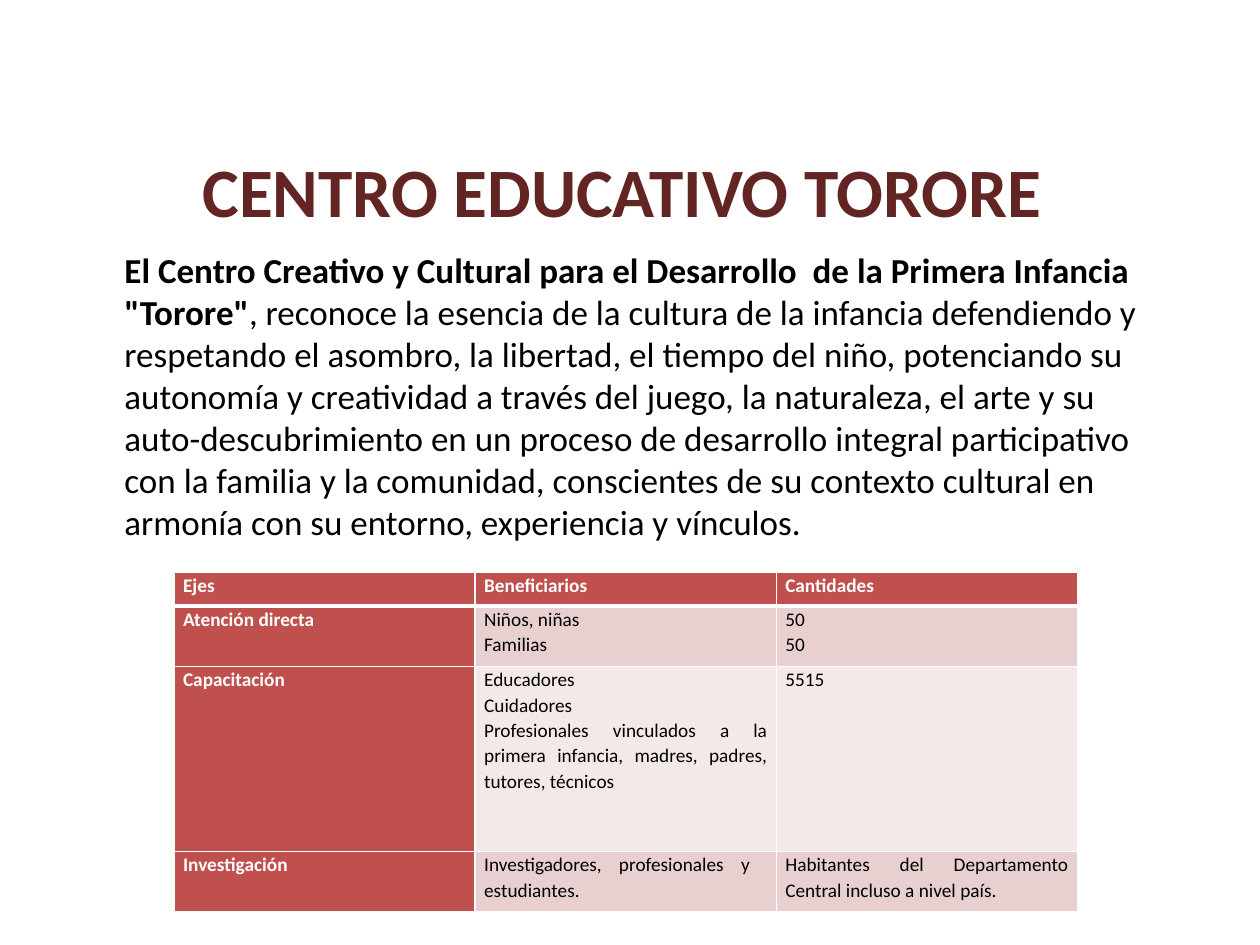
from dataclasses import dataclass

from lxml.etree import SubElement
from pptx import Presentation
from pptx.dml.color import RGBColor
from pptx.enum.text import MSO_ANCHOR as Anchor, MSO_AUTO_SIZE as AutoSize, PP_ALIGN as Align
from pptx.oxml.ns import qn
from pptx.slide import Slide
from pptx.util import Cm, Pt

MAROON = RGBColor(0x63, 0x25, 0x23)
RED = RGBColor(0xC0, 0x50, 0x4D)
ROSE = RGBColor(0xE8, 0xD0, 0xD0)
PALE_ROSE = RGBColor(0xF4, 0xE9, 0xE9)
BLACK = RGBColor(0, 0, 0)
WHITE = RGBColor(0xFF, 0xFF, 0xFF)

TITLE = "CENTRO EDUCATIVO TORORE"
CENTRE_NAME = 'El Centro Creativo y Cultural para el Desarrollo  de la Primera Infancia "Torore"'
MISSION = (
    ", reconoce la esencia de la cultura de la infancia defendiendo y respetando el asombro, "
    "la libertad, el tiempo del niño, potenciando su autonomía y creatividad a través del juego, "
    "la naturaleza, el arte y su auto-descubrimiento en un proceso de desarrollo integral "
    "participativo con la familia y la comunidad, conscientes de su contexto cultural en armonía "
    "con su entorno, experiencia y vínculos."
)
BENEFICIARIES = [
    ["Ejes", "Beneficiarios", "Cantidades"],
    ["Atención directa", "Niños, niñas\nFamilias", "50\n50"],
    [
        "Capacitación",
        "Educadores\nCuidadores\nProfesionales vinculados a la primera infancia, "
        "madres, padres, tutores, técnicos",
        "5515",
    ],
    [
        "Investigación",
        "Investigadores, profesionales y  estudiantes.",
        "Habitantes del Departamento Central incluso a nivel país.",
    ],
]
ROW_HEIGHTS = [0.69, 1.22, 3.73, 1.22]


@dataclass
class SlideBuilder:
    slide: Slide
    font_name: str = "Calibri"

    def format_run(self, run, size, color, bold=False):
        run.font.name = self.font_name
        run.font.size = Pt(size)
        run.font.bold = bold
        run.font.color.rgb = color

    def add_title(self, text, left, top, width, height):
        title = self.slide.shapes.title
        title.left, title.top, title.width, title.height = map(Cm, (left, top, width, height))
        frame = title.text_frame
        frame.text = text
        frame.vertical_anchor = Anchor.MIDDLE
        frame.paragraphs[0].alignment = Align.CENTER
        self.format_run(frame.paragraphs[0].runs[0], 39.6, MAROON, True)

    def add_statement(self, lead, rest, left, top, width, height):
        box = self.slide.shapes.add_textbox(*map(Cm, (left, top, width, height)))
        frame = box.text_frame
        frame.word_wrap = True
        frame.auto_size = AutoSize.SHAPE_TO_FIT_TEXT
        paragraph = frame.paragraphs[0]
        for text, bold in ((lead, True), (rest, False)):
            run = paragraph.add_run()
            run.text = text
            self.format_run(run, 20, BLACK, bold)

    def add_borders(self, cell, widths):
        properties = cell._tc.get_or_add_tcPr()
        for side, width in widths.items():
            line = SubElement(properties, qn(f"a:ln{side}"), w=str(Pt(width)))
            fill = SubElement(line, qn("a:solidFill"))
            SubElement(fill, qn("a:srgbClr"), val=str(WHITE))

    def format_cell(self, cell, text, row, column):
        is_heading = row == 0 or column == 0
        self.add_borders(
            cell, {"L": 1, "R": 1, "T": 3 if row == 1 else 1, "B": 3 if row == 0 else 1}
        )
        cell.fill.solid()
        cell.fill.fore_color.rgb = RED if is_heading else ROSE if row % 2 else PALE_ROSE
        cell.margin_left = cell.margin_right = Cm(0.18)
        cell.margin_top = cell.margin_bottom = 0
        cell.text_frame.text = text
        for paragraph in cell.text_frame.paragraphs:
            paragraph.alignment = Align.JUSTIFY
            paragraph.line_spacing = 1.07
            self.format_run(paragraph.runs[0], 11, WHITE if is_heading else BLACK, is_heading)

    def add_table(self, rows, row_heights, left, top, width):
        table = self.slide.shapes.add_table(
            len(rows), len(rows[0]), Cm(left), Cm(top), Cm(width), Cm(sum(row_heights))
        ).table
        for row, (texts, height) in enumerate(zip(rows, row_heights)):
            table.rows[row].height = Cm(height)
            for column, text in enumerate(texts):
                self.format_cell(table.cell(row, column), text, row, column)


def main():
    presentation = Presentation()
    presentation.slide_width = Cm(25.4)
    presentation.slide_height = Cm(19.05)
    builder = SlideBuilder(presentation.slides.add_slide(presentation.slide_layouts[5]))
    builder.add_title(TITLE, 1.04, 2.92, 23.01, 1.8)
    builder.add_statement(CENTRE_NAME, MISSION, 2.26, 4.88, 21.44, 6.25)
    builder.add_table(BENEFICIARIES, ROW_HEIGHTS, 3.51, 11.53, 18.21)
    presentation.save("out.pptx")


if __name__ == "__main__":
    main()
